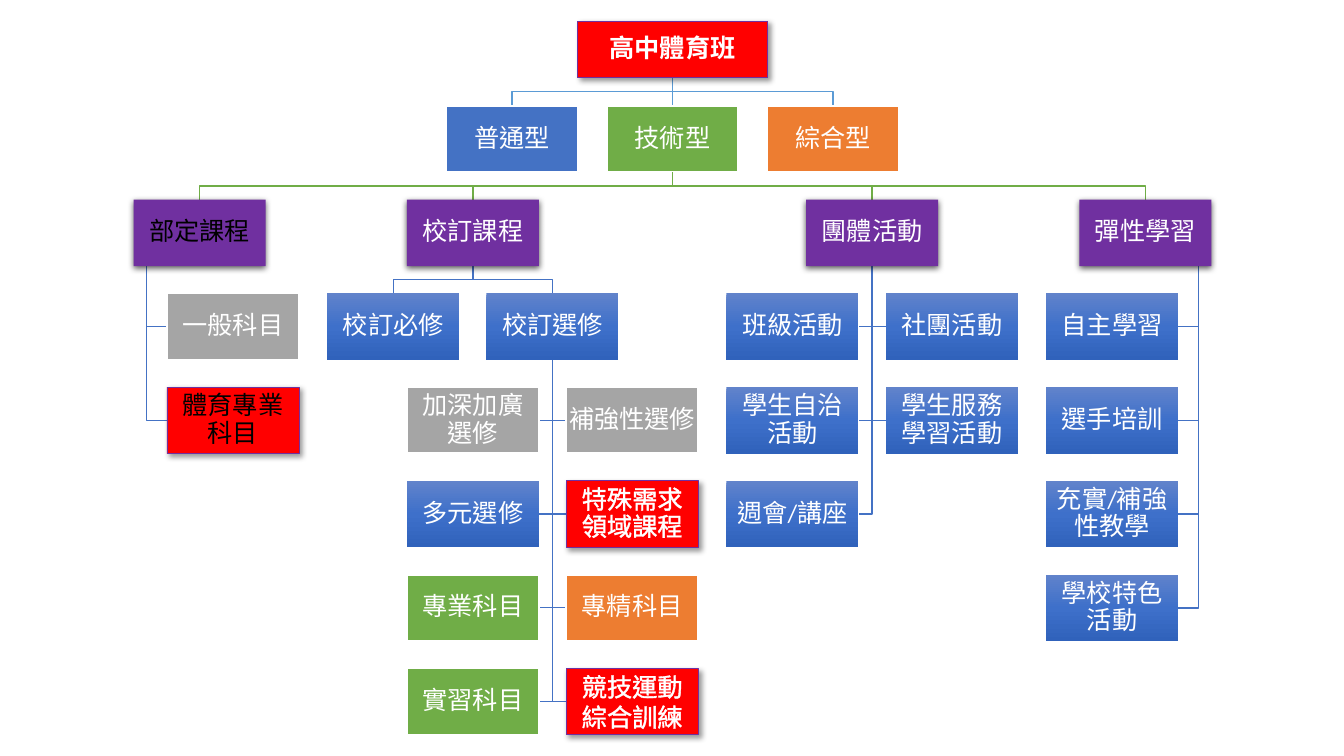
from dataclasses import dataclass
from typing import Optional

from lxml import etree
from pptx import Presentation
from pptx import util as u
from pptx.dml.color import RGBColor
from pptx.enum import shapes, text
from pptx.oxml import ns

BLACK = RGBColor(0x00, 0x00, 0x00)
WHITE = RGBColor(0xFF, 0xFF, 0xFF)
BLUE = RGBColor(0x44, 0x72, 0xC4)
SKY = RGBColor(0x5B, 0x9B, 0xD5)
GREEN = RGBColor(0x70, 0xAD, 0x47)
ORANGE = RGBColor(0xED, 0x7D, 0x31)
GREY = RGBColor(0xA5, 0xA5, 0xA5)
RED = RGBColor(0xFF, 0x00, 0x00)
PURPLE = RGBColor(0x70, 0x30, 0xA0)
GRADIENT = ((0, RGBColor(0x61, 0x83, 0xCB)), (50, RGBColor(0x3E, 0x70, 0xCA)),
            (100, RGBColor(0x30, 0x62, 0xBB)))

BOX_W, BOX_H = 1.31, 0.66
ROW = 0.93                  # distance from one level to the next
SIDE = 0.79                 # half the distance between paired columns
HANG = 0.33                 # shift of a single hanging column
CENTER = BOX_W / 2


@dataclass(frozen=True)
class Style:
    fill: Optional[RGBColor] = None      # None means the blue gradient
    line: Optional[RGBColor] = None
    width: float = 1.5
    shadow: Optional[tuple] = None       # opacity %, blur pt, distance pt, angle


SOFT = (40, 4, 3, 45)
PLAIN = Style()
GENERAL = Style(BLUE, WHITE)
TECHNICAL = Style(GREEN, WHITE)
COMPREHENSIVE = Style(ORANGE, WHITE)
COMMON = Style(GREY, WHITE)
HEADING = Style(PURPLE, shadow=(63, 4.5, 1.5, 90))
SPORT = Style(RED, PURPLE, 0.75, SOFT)
SPORT_THIN = Style(RED, PURPLE, 0.5, SOFT)


@dataclass(frozen=True)
class Node:
    label: str
    style: Style = PLAIN
    color: RGBColor = WHITE
    outlined: bool = False
    bold: bool = False
    spacing: float = 0.9


def add_xml(parent, tag, **attrs):
    return etree.SubElement(parent, ns.qn(tag), attrs)


def set_gradient(sp):
    grad = etree.Element(ns.qn("a:gradFill"), rotWithShape="1")
    stops = add_xml(grad, "a:gsLst")
    for percent, color in GRADIENT:
        stop = add_xml(stops, "a:gs", pos=str(percent * 1000))
        add_xml(stop, "a:srgbClr", val=str(color))
    add_xml(grad, "a:lin", ang="5400000", scaled="0")
    sp._element.spPr.find(ns.qn("a:prstGeom")).addnext(grad)


def set_shadow(sp, opacity, blur, distance, angle):
    effects = sp._element.spPr.find(ns.qn("a:effectLst"))
    shadow = add_xml(effects, "a:outerShdw", blurRad=str(int(u.Pt(blur))),
                     dist=str(int(u.Pt(distance))), dir=str(angle * 60000),
                     algn="ctr", rotWithShape="0")
    color = add_xml(shadow, "a:srgbClr", val=str(BLACK))
    add_xml(color, "a:alpha", val=str(opacity * 1000))


def set_text(sp, node):
    tf = sp.text_frame
    tf.word_wrap = True
    tf.vertical_anchor = text.MSO_ANCHOR.MIDDLE
    tf.margin_left = tf.margin_right = tf.margin_top = tf.margin_bottom = u.Inches(0.01)
    tf.text = node.label
    for p in tf.paragraphs:
        p.alignment = text.PP_ALIGN.CENTER
        p.line_spacing = node.spacing
        for r in p.runs:
            r.font.name = "Calibri"
            r.font.size = u.Pt(18)
            r.font.bold = node.bold
            r.font.color.rgb = node.color
            props = r._r.get_or_add_rPr()
            props.set("lang", "zh-TW")
            if node.outlined:
                outline = etree.Element(ns.qn("a:ln"), w=str(int(u.Pt(0.75))))
                add_xml(add_xml(outline, "a:solidFill"), "a:srgbClr", val=str(WHITE))
                props.insert(0, outline)


def add_box(slide, node, x, y, w=BOX_W, h=BOX_H):
    sp = slide.shapes.add_shape(shapes.MSO_SHAPE.RECTANGLE, *map(u.Inches, (x, y, w, h)))
    sp.shadow.inherit = False
    style = node.style
    if style.fill is None:
        set_gradient(sp)
    else:
        sp.fill.solid()
        sp.fill.fore_color.rgb = style.fill
    if style.line is None:
        sp.line.fill.background()
    else:
        sp.line.color.rgb = style.line
        sp.line.width = u.Pt(style.width)
    if style.shadow:
        set_shadow(sp, *style.shadow)
    set_text(sp, node)


def add_path(slide, points, color):
    """Draw a straight or bent line through the points."""
    points = [(u.Inches(x), u.Inches(y)) for x, y in points]
    if points[0][0] == points[-1][0]:
        sp = slide.shapes.add_connector(shapes.MSO_CONNECTOR.STRAIGHT, *points[0], *points[-1])
        add_xml(sp._element.spPr, "a:effectLst")
    else:
        builder = slide.shapes.build_freeform(*points[0])
        builder.add_line_segments(points[1:], close=False)
        sp = builder.convert_to_shape()
        sp.fill.background()
        sp.shadow.inherit = False
    sp.line.color.rgb = color
    sp.line.width = u.Pt(1)


def add_fork(slide, x, top, bottom, ends, color):
    middle = (top + bottom) / 2
    for end in ends:
        add_path(slide, [(x, top), (x, middle), (end, middle), (end, bottom)], color)


# Root with the three school types, centred on x
def draw_types(slide, x, y):
    root_w, root_h, types_y, step = 1.89, 0.56, y + 0.84, 1.59
    types = (Node("普通型", GENERAL), Node("技術型", TECHNICAL), Node("綜合型", COMPREHENSIVE))
    centers = [x + step * (i - 1) for i in range(3)]
    add_fork(slide, x, y + root_h, types_y, centers, SKY)
    add_box(slide, Node("高中體育班", SPORT, bold=True), x - root_w / 2, y, root_w, root_h)
    for node, center in zip(types, centers):
        add_box(slide, node, center - CENTER, types_y)


# Heading with columns of boxes hung from a trunk; offsets count from x
def draw_branch(slide, x, y, heading, trunk, columns):
    trunk_x = x + trunk
    placed = [(node, x + dx, y + ROW * row)
              for dx, nodes in columns.items() for row, node in enumerate(nodes, 1)]
    for _, left, top in placed:
        edge = left if left > trunk_x else left + BOX_W
        middle = top + BOX_H / 2
        add_path(slide, [(trunk_x, y + BOX_H), (trunk_x, middle), (edge, middle)], BLUE)
    add_box(slide, heading, x, y)
    for node, left, top in placed:
        add_box(slide, node, left, top)


# School courses: heading, required box and the elective branch
def draw_school_courses(slide, x, y):
    required_x, elective_x, row_y = x - SIDE, x + SIDE, y + ROW
    add_fork(slide, x + CENTER, y + BOX_H, row_y,
             (required_x + CENTER, elective_x + CENTER), BLUE)
    add_box(slide, Node("校訂課程", HEADING), x, y)
    add_box(slide, Node("校訂必修"), required_x, row_y)
    draw_branch(slide, elective_x, row_y, Node("校訂選修"), CENTER, {
        -SIDE: [Node("加深加廣\n選修", COMMON), Node("多元選修"),
                Node("專業科目", TECHNICAL), Node("實習科目", TECHNICAL)],
        SIDE: [Node("補強性選修", COMMON), Node("特殊需求\n領域課程", SPORT, outlined=True),
               Node("專精科目", COMPREHENSIVE),
               Node("競技運動\n綜合訓練", SPORT, outlined=True, spacing=1.0)]})


# The four course areas below the school types
def draw_courses(slide, x, y):
    core, school, group, flexible = (x + dx - CENTER for dx in (-4.69, -1.98, 1.98, 4.69))
    add_fork(slide, x, y - ROW + BOX_H, y,
             [left + CENTER for left in (core, school, group, flexible)], GREEN)
    draw_branch(slide, core, y, Node("部定課程", HEADING, BLACK, True), 0.13, {
        HANG: [Node("一般科目", COMMON), Node("體育專業\n科目", SPORT_THIN, BLACK, True)]})
    draw_school_courses(slide, school, y)
    draw_branch(slide, group, y, Node("團體活動", HEADING), CENTER, {
        -SIDE: [Node("班級活動"), Node("學生自治\n活動"), Node("週會/講座")],
        SIDE: [Node("社團活動"), Node("學生服務\n學習活動")]})
    draw_branch(slide, flexible, y, Node("彈性學習", HEADING), BOX_W - 0.13, {
        -HANG: [Node("自主學習"), Node("選手培訓"),
                Node("充實/補強\n性教學"), Node("學校特色\n活動")]})


def main():
    prs = Presentation()
    prs.slide_width, prs.slide_height = u.Inches(13.33), u.Inches(7.5)
    slide = prs.slides.add_slide(prs.slide_layouts[6])
    draw_types(slide, 6.67, 0.21)
    draw_courses(slide, 6.67, 1.98)
    prs.save("out.pptx")


if __name__ == "__main__":
    main()
